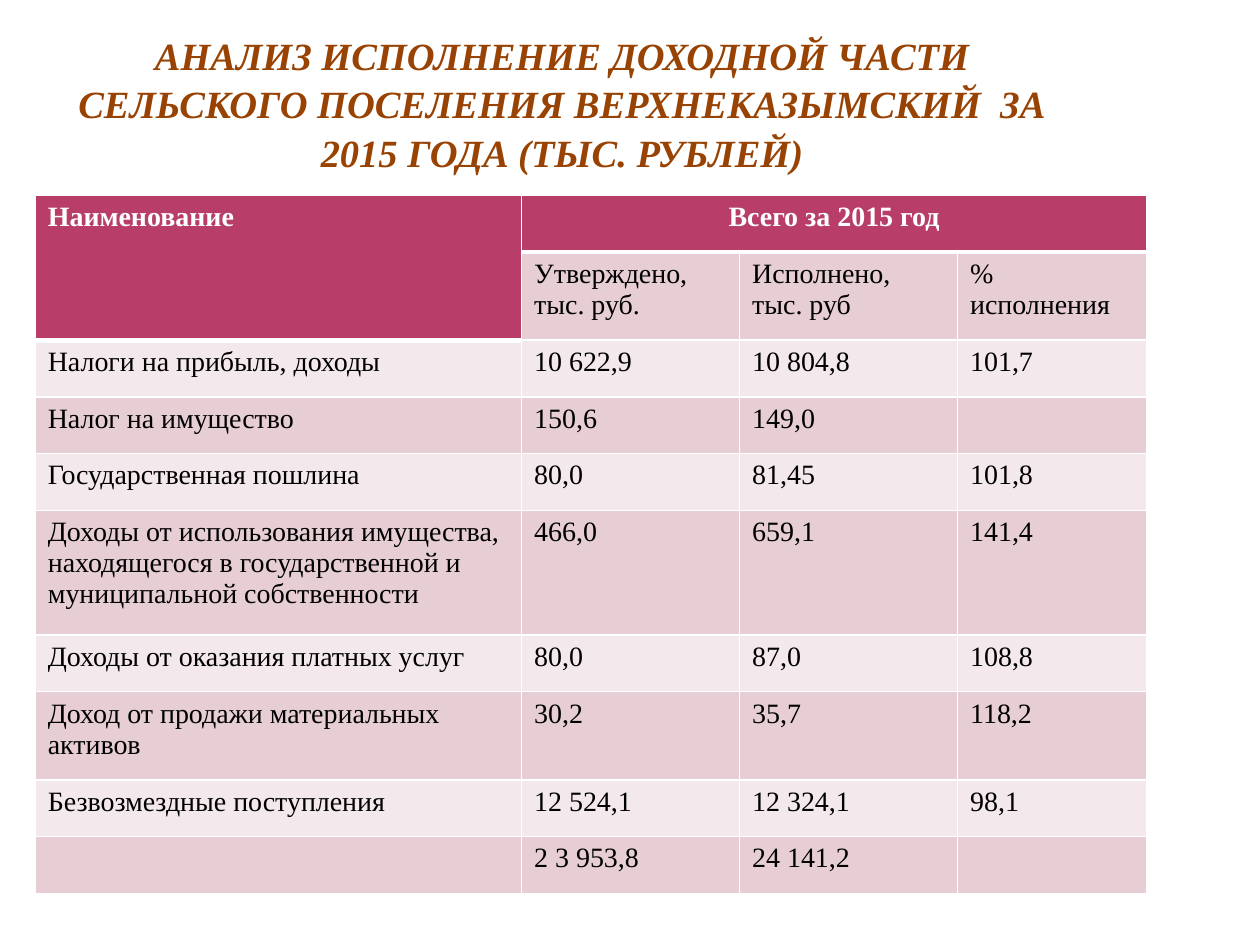
from dataclasses import dataclass

from lxml import etree
from pptx import Presentation
from pptx import util as u
from pptx.dml.color import RGBColor
from pptx.enum import text
from pptx.oxml import ns


@dataclass(frozen=True)
class Theme:
    face: str = "Times New Roman"
    title_size: float = 22
    table_size: float = 16
    title: str = "984204"
    header: str = "B83D68"
    band_dark: str = "E6CED4"
    band_light: str = "F3E8EB"
    light: str = "FFFFFF"
    dark: str = "000000"


THEME = Theme()
TITLE = "АНАЛИЗ ИСПОЛНЕНИЕ ДОХОДНОЙ ЧАСТИ СЕЛЬСКОГО ПОСЕЛЕНИЯ ВЕРХНЕКАЗЫМСКИЙ  ЗА 2015 ГОДА (ТЫС. РУБЛЕЙ)"
COLUMN_WIDTHS = [3.86, 1.73, 1.73, 1.5]
ROWS = [
    (0.45, "Наименование", "Всего за 2015 год", "", ""),
    (0.7, "", "Утверждено, тыс. руб.", "Исполнено, тыс. руб", "% исполнения"),
    (0.45, "Налоги на прибыль, доходы", "10 622,9", "10 804,8", "101,7"),
    (0.45, "Налог на имущество", "150,6", "149,0", ""),
    (0.45, "Государственная пошлина", "80,0", "81,45", "101,8"),
    (0.99, "Доходы от использования имущества, находящегося в государственной и муниципальной собственности",
     "466,0", "659,1", "141,4"),
    (0.45, "Доходы от оказания платных услуг", "80,0", "87,0", "108,8"),
    (0.7, "Доход от продажи материальных активов", "30,2", "35,7", "118,2"),
    (0.45, "Безвозмездные поступления", "12 524,1", "12 324,1", "98,1"),
    (0.45, "", "2 3 953,8", "24 141,2", ""),
]


def style_font(font, size, color, bold=False, italic=False):
    font.name = THEME.face
    font.size = u.Pt(size)
    font.bold = bold
    font.italic = italic
    font.color.rgb = RGBColor.from_string(color)


def set_borders(cell, widths):
    properties = cell._tc.get_or_add_tcPr()
    for position, (side, width) in enumerate(widths.items()):
        line = etree.Element(ns.qn(f"a:ln{side}"), w=str(u.Pt(width)))
        fill = etree.SubElement(line, ns.qn("a:solidFill"))
        etree.SubElement(fill, ns.qn("a:srgbClr"), val=THEME.light)
        properties.insert(position, line)


def add_title(page, left, top, width, height):
    box = page.shapes.title
    box.left, box.top = u.Inches(left), u.Inches(top)
    box.width, box.height = u.Inches(width), u.Inches(height)
    frame = box.text_frame
    frame.text = TITLE
    frame.word_wrap = True
    frame.auto_size = text.MSO_AUTO_SIZE.NONE
    frame.vertical_anchor = text.MSO_ANCHOR.BOTTOM
    frame.margin_left = frame.margin_right = u.Inches(0.05)
    frame.margin_top = frame.margin_bottom = 0
    para = frame.paragraphs[0]
    para.alignment = text.PP_ALIGN.CENTER
    para.line_spacing = 1.05
    style_font(para.font, THEME.title_size, THEME.title, bold=True, italic=True)


def format_cell(cell, row, column, wording):
    is_header = row == 0 or (row == 1 and column == 0)
    band = THEME.band_dark if row % 2 else THEME.band_light
    cell.fill.solid()
    cell.fill.fore_color.rgb = RGBColor.from_string(THEME.header if is_header else band)
    below_header = row == 1 or (row == 2 and column == 0)
    set_borders(cell, {
        "L": 1,
        "R": 1,
        "T": 3 if below_header and not is_header else 1,
        "B": 3 if is_header else 1,
    })
    if wording:
        cell.text = wording
    para = cell.text_frame.paragraphs[0]
    if row == 0 and column > 0:
        para.alignment = text.PP_ALIGN.CENTER
    style_font(para.font, THEME.table_size, THEME.light if is_header else THEME.dark, bold=is_header)


def add_income_table(page, left, top, width, height):
    frame = page.shapes.add_table(
        len(ROWS), len(COLUMN_WIDTHS),
        u.Inches(left), u.Inches(top), u.Inches(width), u.Inches(height),
    )
    table = frame.table
    for column, share in zip(table.columns, COLUMN_WIDTHS):
        column.width = u.Inches(width * share / sum(COLUMN_WIDTHS))
    for row, (row_height, *wordings) in enumerate(ROWS):
        table.rows[row].height = u.Inches(row_height)
        for column, wording in enumerate(wordings):
            format_cell(table.cell(row, column), row, column, wording)
    table.cell(0, 0).merge(table.cell(1, 0))
    table.cell(0, 1).merge(table.cell(0, 3))


def main():
    deck = Presentation()
    deck.slide_width, deck.slide_height = u.Inches(10), u.Inches(7.5)
    page = deck.slides.add_slide(deck.slide_layouts.get_by_name("Title Only"))
    add_title(page, 0.5, 0.21, 7.92, 1.18)
    add_income_table(page, 0.28, 1.55, 8.82, 5.51)
    deck.save("out.pptx")


if __name__ == "__main__":
    main()
